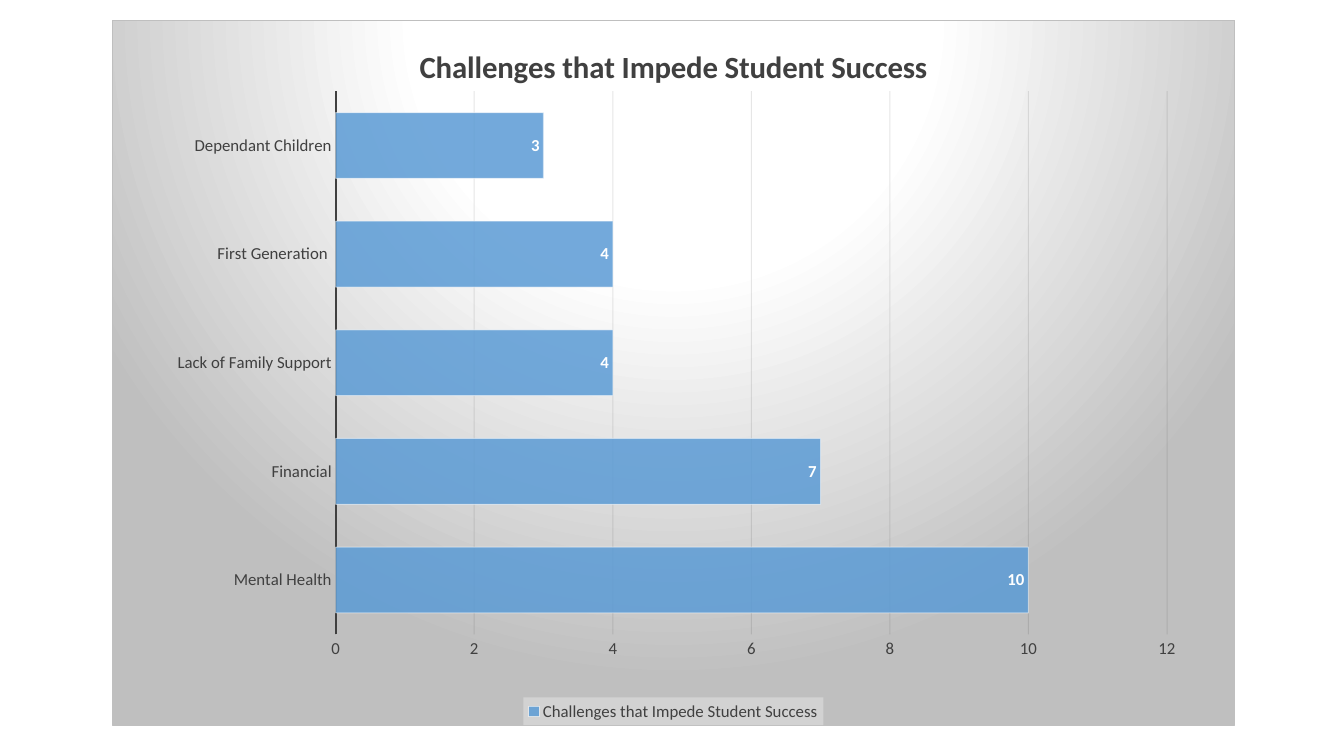
from lxml import etree
from pptx import Presentation
from pptx import util as u
from pptx.chart.data import CategoryChartData
from pptx.dml.color import RGBColor
from pptx.enum import chart as kinds
from pptx.oxml import parse_xml
from pptx.oxml.ns import nsdecls, qn

HEADING = "Challenges that Impede Student Success"
CHALLENGES = {
    "Mental Health": 10,
    "Financial": 7,
    "Lack of Family Support": 4,
    "First Generation ": 4,
    "Dependant Children": 3,
}
DARK, WHITE, GREY, BLUE = "404040", "FFFFFF", "BFBFBF", "5B9BD5"
BACKDROP_STOPS = {0: WHITE, 39: WHITE, 100: GREY}
PLOT_AREA = {"x": 0.199, "y": 0.1, "w": 0.741, "h": 0.771}


def colour(value):
    return RGBColor.from_string(value)


def set_all(target, values):
    for name, value in values.items():
        setattr(target, name, value)


def style_font(font, size, shade, bold=False):
    set_all(font, {"name": "Calibri", "size": u.Pt(size), "bold": bold})
    font.color.rgb = colour(shade)


def style_line(line, shade, width):
    line.color.rgb = colour(shade)
    line.width = u.Pt(width)


def set_opacity(chart, place, percent):
    """Set the opacity of the one colour found at an XPath in the chart."""
    tint = chart.element.xpath(f"{place}//a:srgbClr")[0]
    etree.SubElement(tint, qn("a:alpha")).set("val", str(percent * 1000))


def add_backdrop(chart):
    """Fill the chart frame with a circular gradient and outline it."""
    stops = "".join(
        f'<a:gs pos="{place * 1000}"><a:srgbClr val="{shade}"/></a:gs>'
        for place, shade in BACKDROP_STOPS.items())
    frame = parse_xml(
        f'<c:spPr {nsdecls("c", "a")}><a:gradFill><a:gsLst>{stops}</a:gsLst>'
        '<a:path path="circle">'
        '<a:fillToRect l="50000" t="-80000" r="50000" b="180000"/></a:path>'
        f'</a:gradFill><a:ln w="{u.Pt(0.75)}"><a:solidFill>'
        f'<a:srgbClr val="{GREY}"/></a:solidFill></a:ln></c:spPr>')
    chart.element.find(qn("c:chart")).addnext(frame)


def place_plot(chart):
    """Fix the inner plot area as fractions of the chart."""
    plot_area = chart.element.xpath(".//c:plotArea")[0]
    for layout in plot_area.findall(qn("c:layout")):
        plot_area.remove(layout)
    sizes = "".join(f'<c:{side} val="{share}"/>'
                    for side, share in PLOT_AREA.items())
    plot_area.insert(0, parse_xml(
        f'<c:layout {nsdecls("c")}><c:manualLayout>'
        '<c:layoutTarget val="inner"/><c:xMode val="edge"/>'
        f'<c:yMode val="edge"/>{sizes}</c:manualLayout></c:layout>'))


def style_title(chart):
    chart.has_title = True
    frame = chart.chart_title.text_frame
    frame.text = HEADING
    style_font(frame.paragraphs[0].runs[0].font, 22, DARK, True)


def style_axes(chart):
    for axis in (chart.category_axis, chart.value_axis):
        set_all(axis, {"major_tick_mark": kinds.XL_TICK_MARK.NONE,
                       "minor_tick_mark": kinds.XL_TICK_MARK.NONE})
        style_font(axis.tick_labels.font, 12, DARK)
    style_line(chart.category_axis.format.line, DARK, 1.5)
    values = chart.value_axis
    set_all(values, {"minimum_scale": 0, "maximum_scale": 12, "major_unit": 2,
                     "has_major_gridlines": True})
    values.format.line.fill.background()
    style_line(values.major_gridlines.format.line, "0D0D0D", 0.75)
    set_opacity(chart, ".//c:majorGridlines", 10)


def style_bars(chart):
    plot = chart.plots[0]
    set_all(plot, {"gap_width": 65, "vary_by_categories": False,
                   "has_data_labels": True})
    bars = plot.series[0].format
    bars.fill.solid()
    bars.fill.fore_color.rgb = colour(BLUE)
    style_line(bars.line, WHITE, 0.75)
    set_opacity(chart, ".//c:ser/c:spPr/a:solidFill", 85)
    set_opacity(chart, ".//c:ser/c:spPr/a:ln", 50)
    labels = plot.data_labels
    set_all(labels, {"show_value": True,
                     "position": kinds.XL_LABEL_POSITION.INSIDE_END})
    style_font(labels.font, 12, WHITE, True)


def style_legend(chart):
    chart.has_legend = True
    legend = chart.legend
    set_all(legend, {"position": kinds.XL_LEGEND_POSITION.BOTTOM,
                     "include_in_layout": False})
    style_font(legend.font, 12, DARK)
    panel = parse_xml(
        f'<c:spPr {nsdecls("c", "a")}><a:solidFill><a:srgbClr val="F2F2F2">'
        '<a:alpha val="39000"/></a:srgbClr></a:solidFill></c:spPr>')
    chart.element.xpath(".//c:legend/c:overlay")[0].addnext(panel)


def add_challenge_chart(page):
    data = CategoryChartData()
    data.categories = list(CHALLENGES)
    data.add_series(HEADING, CHALLENGES.values())
    chart = page.shapes.add_chart(
        kinds.XL_CHART_TYPE.BAR_CLUSTERED, u.Cm(2.82), u.Cm(0.51),
        u.Cm(28.3), u.Cm(17.78), data).chart
    style_font(chart.font, 10, "000000")
    for apply in (add_backdrop, place_plot, style_title, style_axes,
                  style_bars, style_legend):
        apply(chart)


def main():
    deck = Presentation()
    set_all(deck, {"slide_width": u.Cm(33.87), "slide_height": u.Cm(19.05)})
    page = deck.slides.add_slide(deck.slide_layouts[6])
    add_challenge_chart(page)
    deck.save("out.pptx")


if __name__ == "__main__":
    main()
